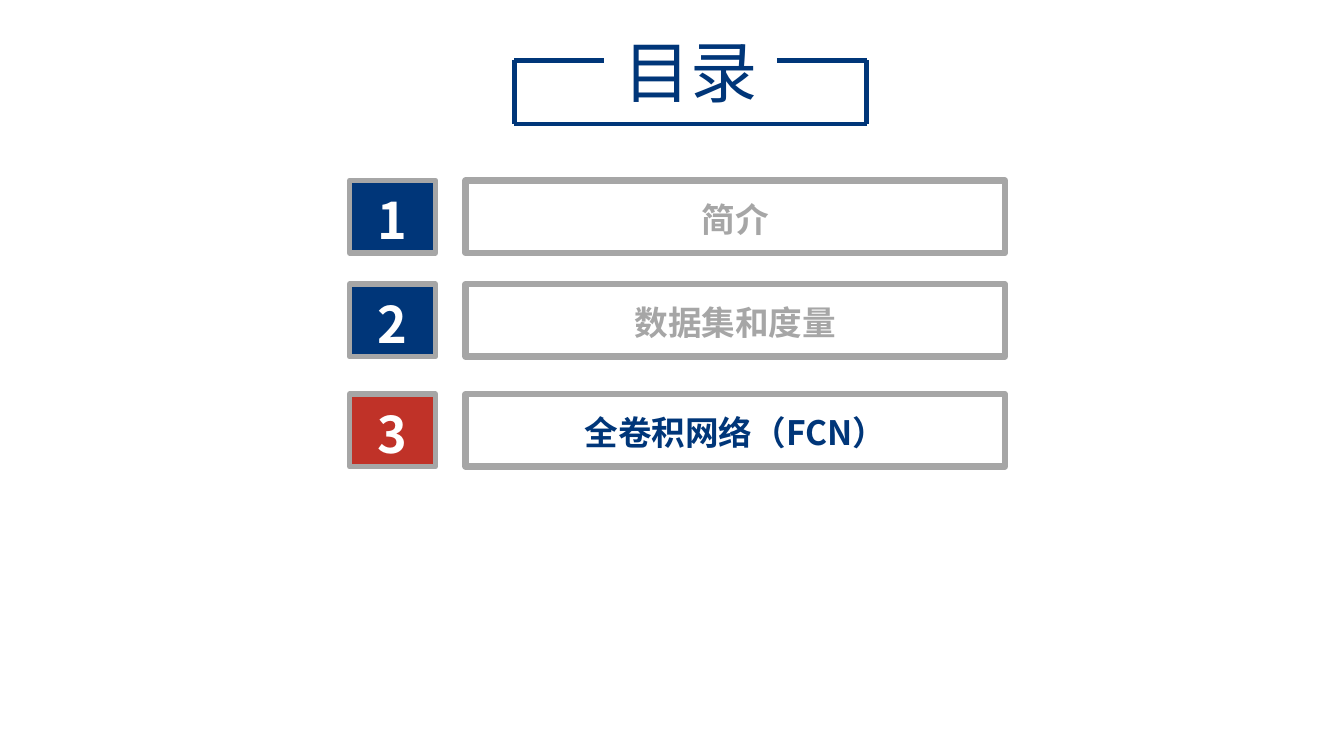
from lxml import etree
from pptx import Presentation
from pptx.dml.color import RGBColor
from pptx.enum import shapes, text
from pptx.oxml import ns
from pptx.util import Pt

NAVY = RGBColor(0x00, 0x36, 0x79)
RED = RGBColor(0xC0, 0x32, 0x28)
GREY = RGBColor(0xA6, 0xA6, 0xA6)
WHITE = RGBColor(0xFF, 0xFF, 0xFF)

# Top of the row, number fill, label, label colour
AGENDA = [
    (128.9, NAVY, "简介", GREY),
    (203, NAVY, "数据集和度量", GREY),
    (281.5, RED, "全卷积网络（FCN）", NAVY),
]
NUMBER_LEFT, NUMBER_WIDTH = 249.8, 61.2
LABEL_LEFT, LABEL_WIDTH, LABEL_HEIGHT = 332.6, 385.2, 36.7
ROW_HEIGHT = 51.8

LEFT, RIGHT, TOP, BOTTOM = 367.5, 619, 43.2, 88.6
DASH = 64
TITLE_BRACKET = [
    (RIGHT - DASH, TOP, RIGHT, TOP),
    (LEFT, TOP, LEFT + DASH, TOP),
    (LEFT, BOTTOM, RIGHT, BOTTOM),
    (LEFT, TOP, LEFT, BOTTOM),
    (RIGHT, TOP, RIGHT, BOTTOM),
]


class AgendaSlide:
    font_name = "Noto Sans CJK SC"

    def __init__(self, presentation):
        self.slide = presentation.slides.add_slide(presentation.slide_layouts[5])

    def add_words(self, shape, words, size, color, bold=True, spacing=1.1):
        frame = shape.text_frame
        frame.word_wrap = True
        frame.auto_size = text.MSO_AUTO_SIZE.NONE
        frame.vertical_anchor = text.MSO_ANCHOR.MIDDLE
        paragraph = frame.paragraphs[0]
        paragraph.alignment = text.PP_ALIGN.CENTER
        paragraph.line_spacing = spacing
        run = paragraph.add_run()
        run.text = words
        font = run.font
        font.name, font.size, font.bold = self.font_name, Pt(size), bold
        font.color.rgb = color
        east_asian = etree.SubElement(run._r.get_or_add_rPr(), ns.qn("a:ea"))
        east_asian.set("typeface", self.font_name)

    def title(self, words, left, top, width, height):
        shape = self.slide.shapes.title
        shape.left, shape.top = Pt(left), Pt(top)
        shape.width, shape.height = Pt(width), Pt(height)
        self.add_words(shape, words, 48, NAVY, bold=False, spacing=1.0)

    def line(self, x1, y1, x2, y2):
        connector = self.slide.shapes.add_connector(
            shapes.MSO_CONNECTOR.STRAIGHT, Pt(x1), Pt(y1), Pt(x2), Pt(y2))
        connector.line.color.rgb = NAVY
        connector.line.width = Pt(3)
        etree.SubElement(connector._element.spPr, ns.qn("a:effectLst"))

    def box(self, left, top, width, height, border, fill=None):
        shape = self.slide.shapes.add_shape(
            shapes.MSO_SHAPE.RECTANGLE, Pt(left), Pt(top), Pt(width), Pt(height))
        shape.shadow.inherit = False
        if fill is None:
            shape.fill.background()
        else:
            shape.fill.solid()
            shape.fill.fore_color.rgb = fill
        shape.line.color.rgb = GREY
        shape.line.width = Pt(border)
        return shape

    def label(self, words, left, top, width, height, color):
        shape = self.slide.shapes.add_textbox(Pt(left), Pt(top), Pt(width), Pt(height))
        self.add_words(shape, words, 24, color)


def main():
    presentation = Presentation()
    presentation.slide_width, presentation.slide_height = Pt(960), Pt(540)
    agenda = AgendaSlide(presentation)

    agenda.title("目录", 419.8, 18, 146.9, 65.5)
    for ends in TITLE_BRACKET:
        agenda.line(*ends)

    for number, (top, fill, words, color) in enumerate(AGENDA, start=1):
        number_box = agenda.box(NUMBER_LEFT, top, NUMBER_WIDTH, ROW_HEIGHT, 4, fill)
        agenda.add_words(number_box, str(number), 36, WHITE)
        agenda.box(LABEL_LEFT, top, LABEL_WIDTH, ROW_HEIGHT, 4.5)
        label_top = top + (ROW_HEIGHT - LABEL_HEIGHT) / 2
        agenda.label(words, LABEL_LEFT, label_top, LABEL_WIDTH, LABEL_HEIGHT, color)

    presentation.save("out.pptx")


if __name__ == "__main__":
    main()
